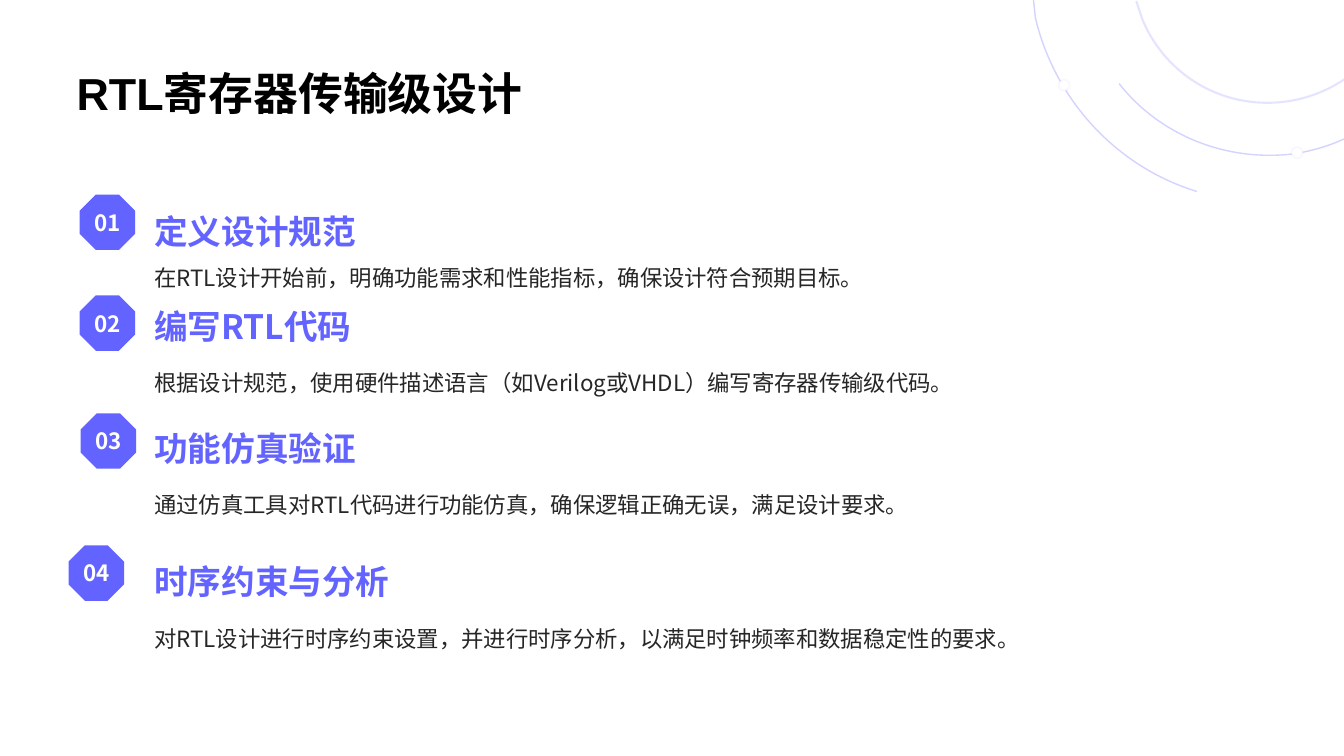
from dataclasses import dataclass

from lxml import etree
from pptx import Presentation
from pptx.dml.color import RGBColor
from pptx.enum.shapes import MSO_SHAPE
from pptx.enum.text import MSO_ANCHOR, PP_ALIGN
from pptx.oxml.ns import qn
from pptx.util import Pt

OCTAGON, OVAL = MSO_SHAPE.OCTAGON, MSO_SHAPE.OVAL
TOP, MIDDLE, BOTTOM = MSO_ANCHOR.TOP, MSO_ANCHOR.MIDDLE, MSO_ANCHOR.BOTTOM
LEFT, CENTER = PP_ALIGN.LEFT, PP_ALIGN.CENTER

PX = 9144  # EMU per px, 100 px to the inch
CJK_FONT, TITLE_FONT = "Noto Sans CJK SC", "Arial"
COLORS = {
    "title": "000000",
    "accent": "6364FF",
    "body": "262626",
    "white": "FFFFFF",
    "arc": "C1C1FF",
}

Point = tuple[int, int]
Box = tuple[int, int, int, int]


@dataclass
class Arc:
    """Points in groups: one ends a line, three give a cubic curve."""
    start: Point
    segments: list[list[Point]]
    width: float = 1
    opacity: int = 70


@dataclass
class Style:
    size: int
    color: str
    bold: bool = False
    font: str = CJK_FONT
    anchor: MSO_ANCHOR = TOP
    align: PP_ALIGN = LEFT
    spacing: float = 1.0


@dataclass
class Step:
    heading: str
    body: str
    badge: Point
    heading_top: int
    heading_height: int
    body_top: int
    body_width: int
    body_height: int = 48


TITLE = Style(32, "title", True, TITLE_FONT, BOTTOM)
HEADING = Style(24, "accent", True, anchor=BOTTOM)
BODY = Style(16, "body", spacing=1.5)
BADGE = Style(16, "white", True, anchor=MIDDLE, align=CENTER)

TEXT_LEFT, HEADING_WIDTH = 153, 359
BADGE_SIZE, DOT_SIZE = 55, 11

ARCS = [
    Arc((1333, 138), [[(1326, 141)],
                      [(1311, 147), (1296, 151), (1280, 153)],
                      [(1215, 160), (1150, 134), (1110, 83)]]),
    Arc((1187, 190), [[(1106, 165), (1046, 98), (1027, 18)], [(1025, 0)]]),
    Arc((1333, 78), [[(1333, 79)],
                     [(1312, 93), (1286, 102), (1257, 102)],
                     [(1201, 102), (1153, 68), (1133, 19)],
                     [(1127, 1)]], 1.5, 42),
]
DOTS = [(1281, 146), (1050, 79)]

STEPS = [
    Step("定义设计规范", "在RTL设计开始前，明确功能需求和性能指标，确保设计符合预期目标。",
         (79, 193), 208, 41, 249, 730, 53),
    Step("编写RTL代码", "根据设计规范，使用硬件描述语言（如Verilog或VHDL）编写寄存器传输级代码。",
         (79, 293), 301, 42, 353, 816),
    Step("功能仿真验证", "通过仿真工具对RTL代码进行功能仿真，确保逻辑正确无误，满足设计要求。",
         (80, 410), 422, 42, 474, 901),
    Step("时序约束与分析", "对RTL设计进行时序约束设置，并进行时序分析，以满足时钟频率和数据稳定性的要求。",
         (68, 541), 551, 45, 607, 1104, 92),
]


def rgb(name: str) -> RGBColor:
    return RGBColor.from_string(COLORS[name])


def emu(box: Box) -> list[int]:
    return [v * PX for v in box]


def set_line(sp, width: float, opacity: int) -> None:
    sp.line.color.rgb = rgb("arc")
    sp.line.width = Pt(width)
    color = sp.line._get_or_add_ln().find(".//" + qn("a:srgbClr"))
    etree.SubElement(color, qn("a:alpha"), val=str(opacity * 1000))


def add_arc(s, arc: Arc) -> None:
    ends = [segment[-1] for segment in arc.segments]
    builder = s.shapes.build_freeform(*arc.start, scale=PX)
    builder.add_line_segments(ends, close=False)
    sp = builder.convert_to_shape()

    # Bend the straight segments that carry control points
    left = min(x for x, _ in [arc.start, *ends])
    top = min(y for _, y in [arc.start, *ends])
    lines = list(sp._element.iter(qn("a:lnTo")))
    for line, segment in zip(lines, arc.segments):
        if len(segment) == 3:
            curve = etree.Element(qn("a:cubicBezTo"))
            for x, y in segment:
                etree.SubElement(curve, qn("a:pt"), x=str(x - left), y=str(y - top))
            line.getparent().replace(line, curve)

    sp.shadow.inherit = False
    sp.fill.background()
    set_line(sp, arc.width, arc.opacity)


def add_preset(s, kind: MSO_SHAPE, corner: Point, size: int, fill: str):
    sp = s.shapes.add_shape(kind, *emu((*corner, size, size)))
    sp.shadow.inherit = False
    sp.fill.solid()
    sp.fill.fore_color.rgb = rgb(fill)
    sp.line.fill.background()
    return sp


def write(sp, text: str, style: Style, wrap: bool = True) -> None:
    tf = sp.text_frame
    tf.word_wrap = wrap
    tf.vertical_anchor = style.anchor
    tf.margin_left = tf.margin_top = tf.margin_right = tf.margin_bottom = 0
    p = tf.paragraphs[0]
    p.alignment = style.align
    p.line_spacing = style.spacing
    r = p.add_run()
    r.text = text
    r.font.size = Pt(style.size)
    r.font.bold = style.bold
    r.font.color.rgb = rgb(style.color)
    r.font.name = style.font
    etree.SubElement(r.font._element, qn("a:ea"), typeface=CJK_FONT)


def add_text(s, box: Box, text: str, style: Style) -> None:
    write(s.shapes.add_textbox(*emu(box)), text, style)


def main() -> None:
    prs = Presentation()
    prs.slide_width, prs.slide_height = 1333 * PX, 750 * PX
    s = prs.slides.add_slide(prs.slide_layouts[6])

    # Corner decoration
    for arc in ARCS:
        add_arc(s, arc)
    for corner in DOTS:
        dot = add_preset(s, OVAL, corner, DOT_SIZE, "white")
        set_line(dot, 1.5, 10)

    # Title
    add_text(s, (76, 39, 1181, 79), "RTL寄存器传输级设计", TITLE)

    # Numbered steps
    for number, step in enumerate(STEPS, 1):
        add_text(s, (TEXT_LEFT, step.body_top, step.body_width, step.body_height),
                 step.body, BODY)
        add_text(s, (TEXT_LEFT, step.heading_top, HEADING_WIDTH, step.heading_height),
                 step.heading, HEADING)
        badge = add_preset(s, OCTAGON, step.badge, BADGE_SIZE, "accent")
        write(badge, f"{number:02}", BADGE, wrap=False)

    prs.save("out.pptx")


if __name__ == "__main__":
    main()
